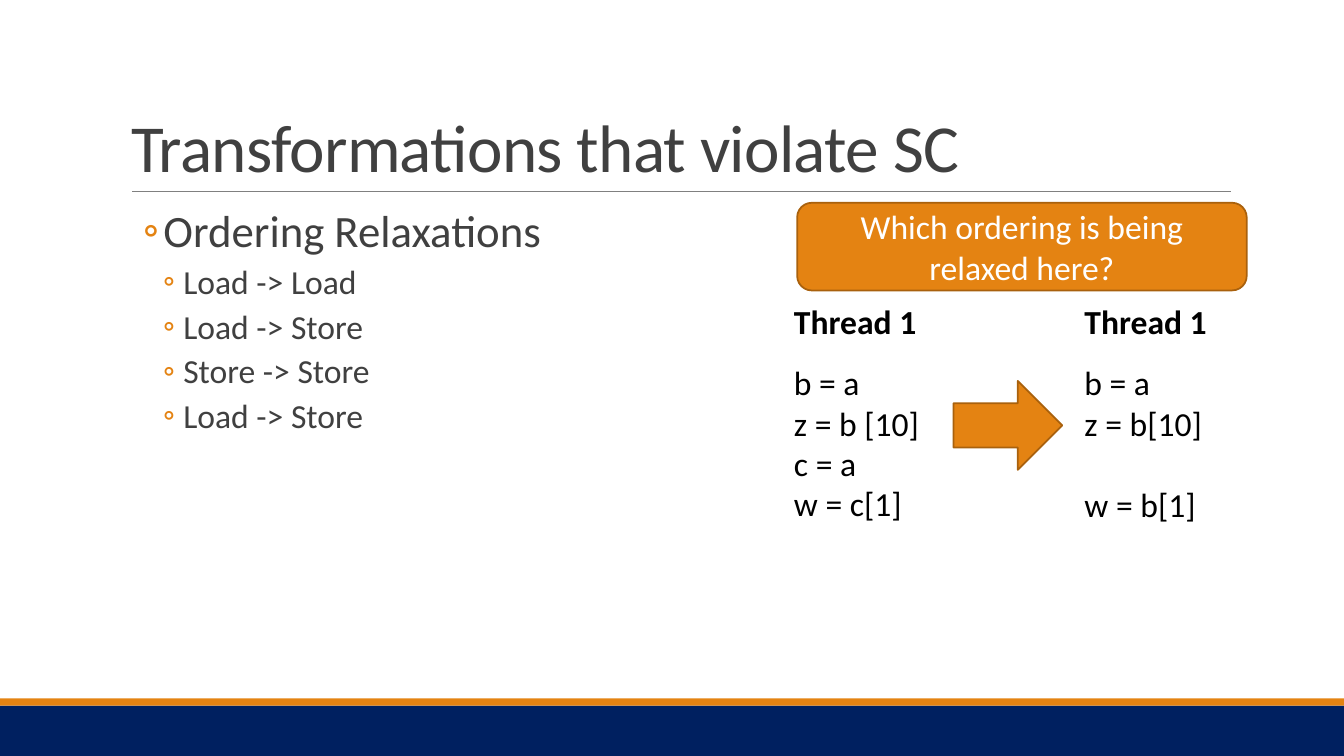
from lxml import etree
from pptx import Presentation
from pptx import util as u
from pptx.dml.color import RGBColor
from pptx.enum import shapes, text
from pptx.oxml import ns

ORANGE, NAVY, DARK_ORANGE = "E48312", "002060", "A9610D"
GREY, RULE_GREY, BLACK, WHITE = "404040", "808080", "000000", "FFFFFF"


def rgb(value):
    return RGBColor.from_string(value)


def box_cm(*lengths):
    return [u.Cm(length) for length in lengths]


def apply(target, values):
    """Set every attribute named in the dict."""
    for name, value in values.items():
        setattr(target, name, value)


def add_bullet(paragraph, margin, indent):
    properties = paragraph._p.get_or_add_pPr()
    properties.set("marL", str(u.Cm(margin)))
    properties.set("indent", str(u.Cm(indent)))
    colour = etree.SubElement(properties, ns.qn("a:buClr"))
    etree.SubElement(colour, ns.qn("a:srgbClr"), val=ORANGE)
    etree.SubElement(properties, ns.qn("a:buFont"), typeface="Calibri")
    etree.SubElement(properties, ns.qn("a:buChar"), char="◦")


class SlideBuilder:
    font_name = "Calibri"

    def __init__(self, presentation):
        self.slide = presentation.slides.add_slide(presentation.slide_layouts[5])

    def add_words(self, paragraph, wording, size, colour, bold=False, **format_values):
        run = paragraph.add_run()
        run.text = wording
        apply(run.font, {"name": self.font_name, "size": u.Pt(size), "bold": bold})
        run.font.color.rgb = rgb(colour)
        apply(paragraph, format_values)
        return run

    def title(self, box, wording):
        title = self.slide.shapes.title
        apply(title, dict(zip(("left", "top", "width", "height"), box_cm(*box))))
        frame = title.text_frame
        apply(frame, {"word_wrap": True, "auto_size": text.MSO_AUTO_SIZE.NONE,
                      "vertical_anchor": text.MSO_ANCHOR.BOTTOM})
        run = self.add_words(frame.paragraphs[0], wording, 48, GREY,
                             alignment=text.PP_ALIGN.LEFT, line_spacing=0.85)
        run.font._element.set("spc", "-50")

    def text_box(self, box):
        frame = self.slide.shapes.add_textbox(*box_cm(*box)).text_frame
        frame.word_wrap = True
        return frame

    def bullets(self, box, heading, items):
        frame = self.text_box(box)
        apply(frame, {"margin_left": 0, "margin_right": 0})
        spacing = {"line_spacing": 0.9, "space_after": u.Pt(4)}
        paragraph = frame.paragraphs[0]
        add_bullet(paragraph, 1.07, -0.51)
        self.add_words(paragraph, heading, 32, GREY, **spacing)
        for item in items:
            paragraph = frame.add_paragraph()
            add_bullet(paragraph, 1.57, -0.51)
            self.add_words(paragraph, item, 24, GREY, level=1,
                           space_before=u.Pt(2), **spacing)

    def thread(self, box, heading, statements):
        """Place a bold heading over (statement, space before in points) lines."""
        frame = self.text_box(box)
        self.add_words(frame.paragraphs[0], heading, 24, BLACK, bold=True)
        for statement, gap in statements:
            self.add_words(frame.add_paragraph(), statement, 24, BLACK,
                           space_before=u.Pt(gap))

    def shape(self, kind, box, fill, line=None, wording=None):
        shape = self.slide.shapes.add_shape(kind, *box_cm(*box))
        shape.shadow.inherit = False
        shape.fill.solid()
        shape.fill.fore_color.rgb = rgb(fill)
        if line:
            shape.line.color.rgb = rgb(line)
            shape.line.width = u.Pt(1.25)
        else:
            shape.line.fill.background()
        if wording:
            frame = shape.text_frame
            apply(frame, {"word_wrap": True,
                          "vertical_anchor": text.MSO_ANCHOR.MIDDLE})
            self.add_words(frame.paragraphs[0], wording, 24, WHITE,
                           alignment=text.PP_ALIGN.CENTER)

    def rule(self, left, right, top):
        line = self.slide.shapes.add_connector(
            shapes.MSO_CONNECTOR.STRAIGHT, *box_cm(left, top, right, top))
        line.line.color.rgb = rgb(RULE_GREY)
        line.line.width = u.Pt(0.5)
        etree.SubElement(line._element.spPr, ns.qn("a:effectLst"))


def main():
    presentation = Presentation()
    apply(presentation, {"slide_width": u.Cm(33.87), "slide_height": u.Cm(19.05)})
    builder = SlideBuilder(presentation)
    kinds = shapes.MSO_SHAPE

    builder.shape(kinds.RECTANGLE, (0, 17.78, 33.87, 1.27), NAVY)
    builder.shape(kinds.RECTANGLE, (0, 17.6, 33.87, 0.18), ORANGE)
    builder.rule(3.33, 31.01, 4.83)
    builder.title((3.05, 0.79, 27.94, 4.04), "Transformations that violate SC")
    builder.bullets((3.05, 5.13, 27.94, 11.18), "Ordering Relaxations",
                    ["Load -> Load", "Load -> Store", "Store -> Store",
                     "Load -> Store"])

    heading_gap, removed_line_gap = 14.65, 29.3
    threads = [
        (19.76, [("b = a", heading_gap), ("z = b [10]", 0), ("c = a", 0),
                 ("w = c[1]", 0)]),
        (27.08, [("b = a", heading_gap), ("z = b[10]", 0),
                 ("w = b[1]", removed_line_gap)]),
    ]
    for left, statements in threads:
        builder.thread((left, 7.47, 5.99, 5.89), "Thread 1", statements)
    builder.shape(kinds.RIGHT_ARROW, (24.03, 9.6, 2.74, 2.24), ORANGE, DARK_ORANGE)
    builder.shape(kinds.ROUNDED_RECTANGLE, (20.09, 5.11, 11.33, 2.21), ORANGE,
                  DARK_ORANGE, "Which ordering is being relaxed here?")

    presentation.save("out.pptx")


if __name__ == "__main__":
    main()
